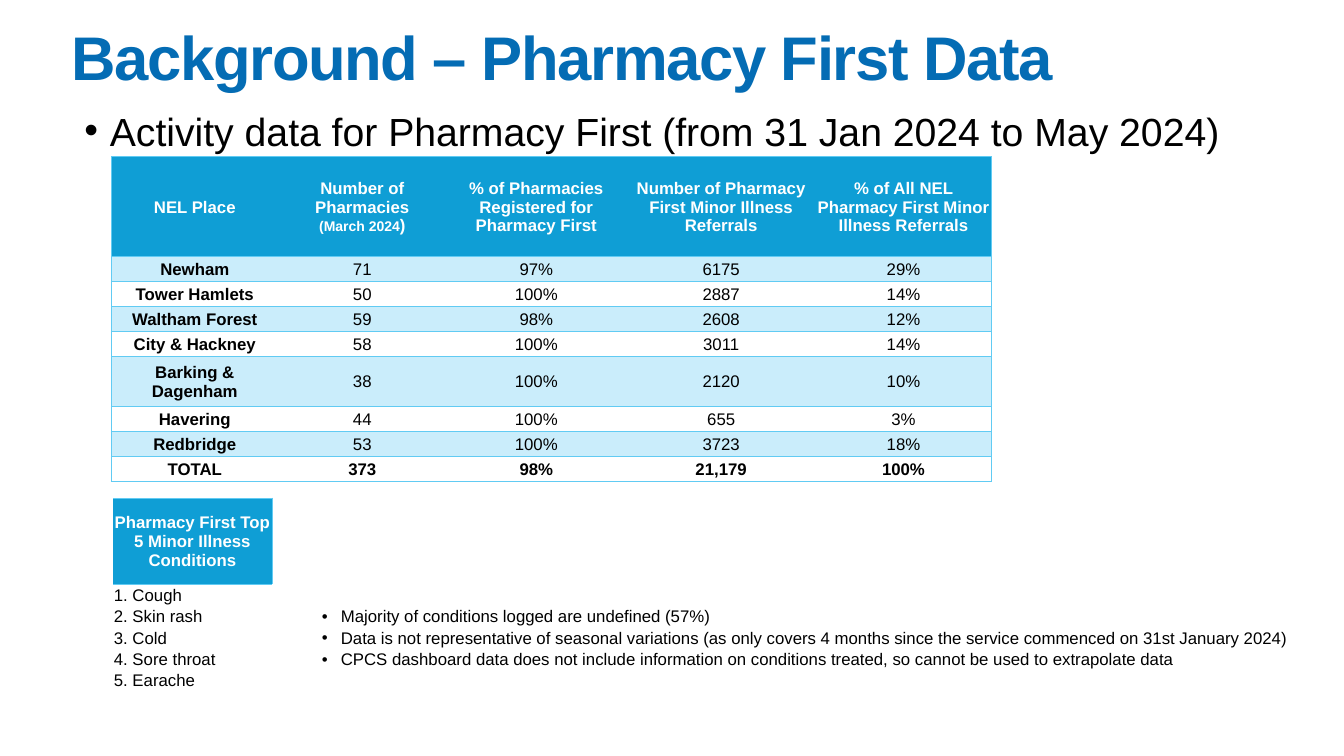
"""Build the Pharmacy First background data slide."""
from dataclasses import dataclass
from typing import NamedTuple

from lxml.etree import SubElement
from pptx import Presentation
from pptx.dml.color import RGBColor
from pptx.enum.text import MSO_ANCHOR, PP_ALIGN
from pptx.oxml.ns import qn
from pptx.util import Cm, Pt

FONT = "Arial"
BLACK, WHITE = "000000", "FFFFFF"
TITLE_BLUE, HEADER_BLUE = "046CB4", "0F9ED5"
BAND_BLUE, RULE_BLUE = "CAEDFB", "61CBF3"
PLAIN_STYLE = "{2D5ABB26-0587-4C30-8999-92F81FD0307C}"
BODY_SIZE = 12


class Style(NamedTuple):
    size: float = BODY_SIZE
    color: str = BLACK
    bold: bool = False


HEADING = Style(color=WHITE, bold=True)
SMALL_HEADING = Style(size=10, color=WHITE, bold=True)
STRONG = Style(bold=True)
PLAIN = Style()


@dataclass
class Place:
    name: str
    pharmacies: str
    registered: str
    referrals: str
    share: str
    height: float = 0.63

    def values(self) -> list[str]:
        return [self.name, self.pharmacies, self.registered, self.referrals, self.share]


@dataclass
class Condition:
    name: str
    note: str = ""
    note_span: int = 1


PLACES = [
    Place("Newham", "71", "97%", "6175", "29%"),
    Place("Tower Hamlets", "50", "100%", "2887", "14%"),
    Place("Waltham Forest", "59", "98%", "2608", "12%"),
    Place("City & Hackney", "58", "100%", "3011", "14%"),
    Place("Barking & Dagenham", "38", "100%", "2120", "10%", 1.25),
    Place("Havering", "44", "100%", "655", "3%"),
    Place("Redbridge", "53", "100%", "3723", "18%"),
    Place("TOTAL", "373", "98%", "21,179", "100%"),
]
PLACE_HEADINGS = [
    "NEL Place",
    "Number of Pharmacies",
    "% of Pharmacies Registered for Pharmacy First",
    "Number of Pharmacy First Minor Illness Referrals",
    "% of All NEL Pharmacy First Minor Illness Referrals",
]
CONDITIONS = [
    Condition("1. Cough"),
    Condition("2. Skin rash", "Majority of conditions logged are undefined (57%)", 6),
    Condition("3. Cold", "Data is not representative of seasonal variations (as only covers "
              "4 months since the service commenced on 31st January 2024)", 14),
    Condition("4. Sore throat", "CPCS dashboard data does not include information on "
              "conditions treated, so cannot be used to extrapolate data", 13),
    Condition("5. Earache"),
]
PLACE_WIDTHS = [4.22, 4.22, 4.55, 4.77, 4.42]
CONDITION_WIDTHS = [4.0, 1.24] + [1.7] * 13 + [2.35]
NOTE_COLUMN = 2


def rgb(color: str) -> RGBColor:
    return RGBColor.from_string(color)


def add_run(paragraph, text: str, style: Style):
    run = paragraph.add_run()
    run.text = text
    run.font.name = FONT
    run.font.size = Pt(style.size)
    run.font.bold = style.bold
    run.font.color.rgb = rgb(style.color)
    return run


def add_bullet(paragraph, indent: float) -> None:
    properties = paragraph._p.get_or_add_pPr()
    properties.set("marL", str(Cm(indent)))
    properties.set("indent", str(-Cm(indent)))
    SubElement(properties, qn("a:buFont"), typeface=FONT)
    SubElement(properties, qn("a:buChar"), char="•")


def add_text_box(slide, left: float, top: float, width: float, height: float,
                 anchor: MSO_ANCHOR):
    frame = slide.shapes.add_textbox(Cm(left), Cm(top), Cm(width), Cm(height)).text_frame
    frame.word_wrap = True
    frame.vertical_anchor = anchor
    return frame.paragraphs[0]


def add_plain_table(slide, left: float, top: float, widths: list[float],
                    heights: list[float]):
    table = slide.shapes.add_table(len(heights), len(widths), Cm(left), Cm(top),
                                   Cm(sum(widths)), Cm(sum(heights))).table
    table.first_row = table.horz_banding = False
    table._tbl.tblPr.find(qn("a:tableStyleId")).text = PLAIN_STYLE
    for column, width in zip(table.columns, widths):
        column.width = Cm(width)
    for row, height in zip(table.rows, heights):
        row.height = Cm(height)
    for cell in table.iter_cells():
        cell.margin_left = cell.margin_right = cell.margin_top = Cm(0.02)
        cell.margin_bottom = 0
        cell.vertical_anchor = MSO_ANCHOR.MIDDLE
        cell.fill.background()
        SubElement(cell.text_frame.paragraphs[0]._p, qn("a:endParaRPr"),
                   sz=str(BODY_SIZE * 100))
    return table


def draw_borders(cell, sides: str) -> None:
    properties = cell._tc.get_or_add_tcPr()
    for position, side in enumerate(side for side in "LRTB" if side in sides):
        line = SubElement(properties, qn(f"a:ln{side}"), w=str(Pt(0.5)))
        fill = SubElement(line, qn("a:solidFill"))
        SubElement(fill, qn("a:srgbClr"), val=RULE_BLUE)
        properties.insert(position, line)


def fill_cell(cell, text: str, style: Style, fill: str = "", centred: bool = True):
    paragraph = cell.text_frame.paragraphs[0]
    paragraph.alignment = PP_ALIGN.CENTER if centred else PP_ALIGN.LEFT
    add_run(paragraph, text, style)
    if fill:
        cell.fill.solid()
        cell.fill.fore_color.rgb = rgb(fill)
    return paragraph


def add_places(slide) -> None:
    heights = [2.52] + [place.height for place in PLACES]
    table = add_plain_table(slide, 2.8, 3.95, PLACE_WIDTHS, heights)
    last = len(PLACE_WIDTHS) - 1
    for column, heading in enumerate(PLACE_HEADINGS):
        paragraph = fill_cell(table.cell(0, column), heading, HEADING, HEADER_BLUE)
        if heading == "Number of Pharmacies":
            paragraph.add_line_break()
            line_break = paragraph._p.find(qn("a:br"))
            SubElement(line_break, qn("a:rPr"), sz=str(BODY_SIZE * 100))
            add_run(paragraph, "(March 2024", SMALL_HEADING)
            add_run(paragraph, ")", HEADING)
    for row, place in enumerate(PLACES, 1):
        for column, value in enumerate(place.values()):
            strong = column == 0 or place.name == "TOTAL"
            fill_cell(table.cell(row, column), value, STRONG if strong else PLAIN,
                      BAND_BLUE if row % 2 else "")
    for row in table.rows:
        for column, cell in enumerate(row.cells):
            draw_borders(cell, "TB" + "L" * (column == 0) + "R" * (column == last))


def add_conditions(slide) -> None:
    heights = [2.17] + [0.54] * len(CONDITIONS)
    table = add_plain_table(slide, 2.85, 12.55, CONDITION_WIDTHS, heights)
    header = table.cell(0, 0)
    fill_cell(header, "Pharmacy First Top 5 Minor Illness Conditions", HEADING, HEADER_BLUE)
    draw_borders(header, "RTB")
    for row, condition in enumerate(CONDITIONS, 1):
        fill_cell(table.cell(row, 0), condition.name, PLAIN, centred=False)
        if condition.note:
            note = table.cell(row, NOTE_COLUMN)
            note.merge(table.cell(row, NOTE_COLUMN + condition.note_span - 1))
            add_bullet(fill_cell(note, condition.note, PLAIN, centred=False), 0.48)


def main() -> None:
    deck = Presentation()
    deck.slide_width, deck.slide_height = Cm(33.87), Cm(19.05)
    slide = deck.slides.add_slide(deck.slide_layouts[6])

    title = add_text_box(slide, 1.55, 0.46, 31.04, 2.11, MSO_ANCHOR.MIDDLE)
    title.line_spacing = 0.9
    title_run = add_run(title, "Background – Pharmacy First Data",
                        Style(44, TITLE_BLUE, True))
    title_run.font._element.set("spc", "-100")

    activity = add_text_box(slide, 1.88, 2.57, 31.52, 14.6, MSO_ANCHOR.TOP)
    add_bullet(activity, 0.64)
    add_run(activity, "Activity data for Pharmacy First (from 31 Jan 2024 to May 2024)",
            Style(28))

    add_places(slide)
    add_conditions(slide)
    deck.save("out.pptx")


if __name__ == "__main__":
    main()
